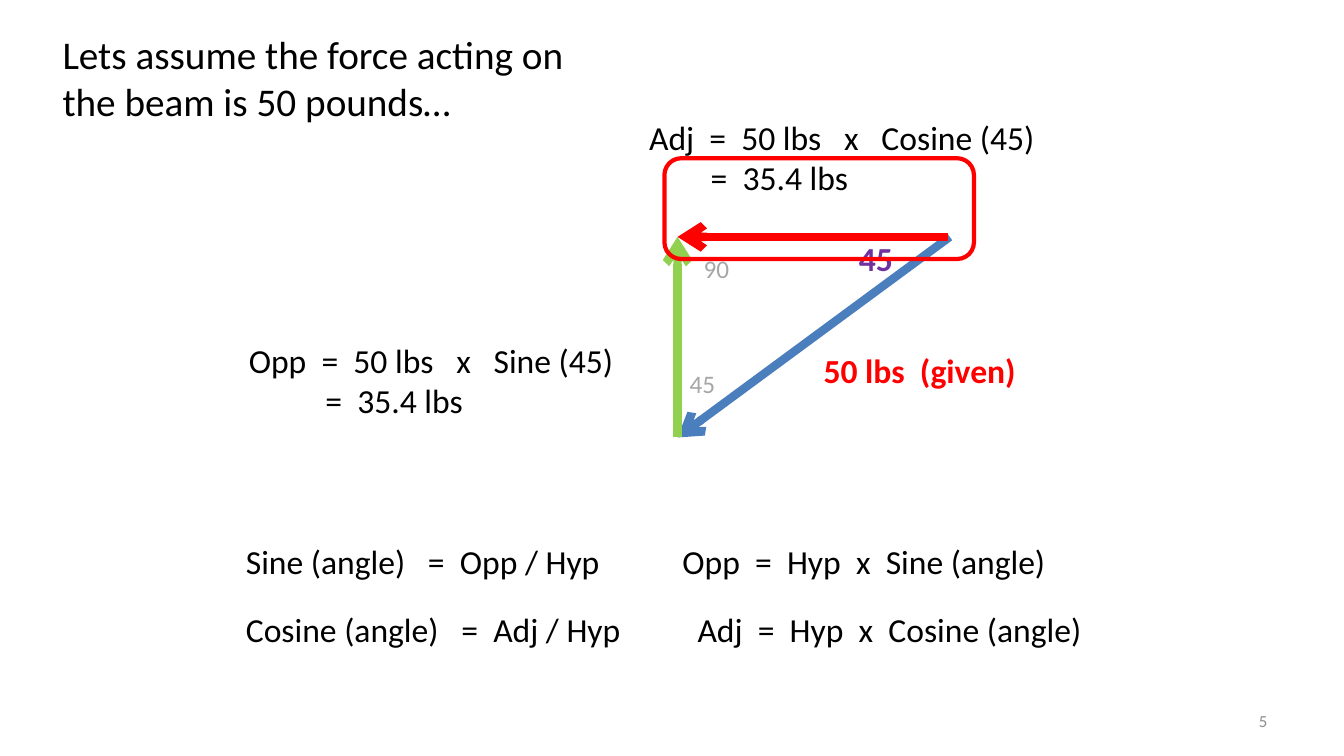
"""Build a slide that resolves a 50 pound force into its two components."""
from typing import NamedTuple

from pptx import Presentation
from pptx.dml.color import RGBColor
from pptx.enum.shapes import MSO_CONNECTOR, MSO_SHAPE
from pptx.enum.text import MSO_ANCHOR, MSO_AUTO_SIZE, PP_ALIGN
from pptx.oxml.xmlchemy import OxmlElement
from pptx.util import Inches, Pt

BLACK, RED, GREY = "000000", "FF0000", "A6A6A6"
ADJ_INDENT, RESULT_INDENT = 0.15, 0.76
LEFT_COLUMN, RIGHT_COLUMN = 2.34, 6.67
SINE_ROW, COSINE_ROW = 5.32, 5.99
RIGHT_ANGLE, FOOT, TIP = (6.72, 2.35), (6.72, 4.34), (9.4, 2.35)


class Line(NamedTuple):
    """One paragraph and its left indent in inches."""
    text: str
    indent: float = 0


class Label(NamedTuple):
    """A text box with its place and format."""
    left: float
    top: float
    width: float
    height: float
    lines: list[Line]
    size: int = 24
    color: str = BLACK
    bold: bool = False


class Force(NamedTuple):
    """A force arrow from start to end."""
    start: tuple[float, float]
    end: tuple[float, float]
    color: str


FORCES = [
    Force((9.42, 2.35), FOOT, "4B7EBC"),
    Force(TIP, RIGHT_ANGLE, RED),
    Force(FOOT, RIGHT_ANGLE, "92D050"),
]

RESULT = Line("=  35.4 lbs", RESULT_INDENT)
LABELS = [
    Label(6.88, 2.46, 0.62, 0.4, [Line("90")], 18, GREY),
    Label(8.42, 2.31, 0.62, 0.5, [Line("45")], 24, "7030A0", True),
    Label(6.74, 3.61, 0.62, 0.4, [Line("45")], 18, GREY),
    Label(8.07, 3.42, 2.22, 0.5, [Line("50 lbs  (given)")], 24, RED, True),
    Label(LEFT_COLUMN, SINE_ROW, 4.8, 0.5, [Line("Sine (angle)   =  Opp / Hyp")]),
    Label(RIGHT_COLUMN, SINE_ROW, 4.8, 0.5, [Line("Opp  =  Hyp  x  Sine (angle)")]),
    Label(LEFT_COLUMN, COSINE_ROW, 4.8, 0.5, [Line("Cosine (angle)   =  Adj / Hyp")]),
    Label(RIGHT_COLUMN, COSINE_ROW, 4.8, 0.5,
          [Line("Adj  =  Hyp  x  Cosine (angle)", ADJ_INDENT)]),
    Label(2.37, 3.32, 4.8, 0.91, [Line("Opp  =  50 lbs   x   Sine (45)"), RESULT]),
    Label(6.19, 1.11, 4.8, 0.91,
          [Line("Adj  =  50 lbs   x   Cosine (45)", ADJ_INDENT), RESULT]),
]
TITLE = Label(0.52, 0.25, 5.39, 1.04,
              [Line("Lets assume the force acting on the beam is 50 pounds…")], 28)
PAGE_NUMBER = Label(9.56, 6.95, 3.11, 0.4, [Line("5")], 12, "8C8C8C")


def rgb(color: str) -> RGBColor:
    """Turn a hex string into a colour."""
    return RGBColor.from_string(color)


def write_text(sp, label: Label, align=PP_ALIGN.LEFT, anchor=MSO_ANCHOR.TOP) -> None:
    """Fill a shape with the paragraphs of a label."""
    tf = sp.text_frame
    frame_format = {"word_wrap": True, "auto_size": MSO_AUTO_SIZE.NONE,
                    "vertical_anchor": anchor}
    for name, value in frame_format.items():
        setattr(tf, name, value)
    font_format = {"name": "Calibri", "size": Pt(label.size), "bold": label.bold}
    for i, line in enumerate(label.lines):
        p = tf.add_paragraph() if i else tf.paragraphs[0]
        p.alignment = align
        if line.indent:
            p._p.get_or_add_pPr().set("marL", str(Inches(line.indent)))
        r = p.add_run()
        r.text = line.text
        for name, value in font_format.items():
            setattr(r.font, name, value)
        r.font.color.rgb = rgb(label.color)


def add_label(s, label: Label, **layout) -> None:
    """Add a label as a text box."""
    sp = s.shapes.add_textbox(*map(Inches, label[:4]))
    write_text(sp, label, **layout)


def add_title(s, label: Label) -> None:
    """Move and fill the title placeholder."""
    sp = s.shapes.title
    for name, value in zip(("left", "top", "width", "height"), label[:4]):
        setattr(sp, name, Inches(value))
    write_text(sp, label)


def add_force(s, force: Force) -> None:
    """Draw a force as a thick line with an arrowhead."""
    sp = s.shapes.add_connector(MSO_CONNECTOR.STRAIGHT,
                                *map(Inches, force.start + force.end))
    sp.line.color.rgb = rgb(force.color)
    sp.line.width = Pt(6)
    tail = OxmlElement("a:tailEnd")
    tail.set("type", "arrow")
    sp.line._get_or_add_ln().append(tail)
    sp._element.spPr.append(OxmlElement("a:effectLst"))


def add_highlight(s) -> None:
    """Outline the adjacent force and its result."""
    sp = s.shapes.add_shape(MSO_SHAPE.ROUNDED_RECTANGLE,
                            *map(Inches, (6.59, 1.57, 3.07, 1)))
    sp.shadow.inherit = False
    sp.fill.background()
    sp.line.color.rgb = rgb(RED)
    sp.line.width = Pt(3)


def main() -> None:
    """Build and save the slide."""
    prs = Presentation()
    prs.slide_width, prs.slide_height = Inches(13.33), Inches(7.5)
    s = prs.slides.add_slide(prs.slide_layouts[5])
    add_title(s, TITLE)
    add_label(s, PAGE_NUMBER, align=PP_ALIGN.RIGHT, anchor=MSO_ANCHOR.MIDDLE)
    for force in FORCES:
        add_force(s, force)
    for label in LABELS:
        add_label(s, label)
    add_highlight(s)
    prs.save("out.pptx")


if __name__ == "__main__":
    main()
